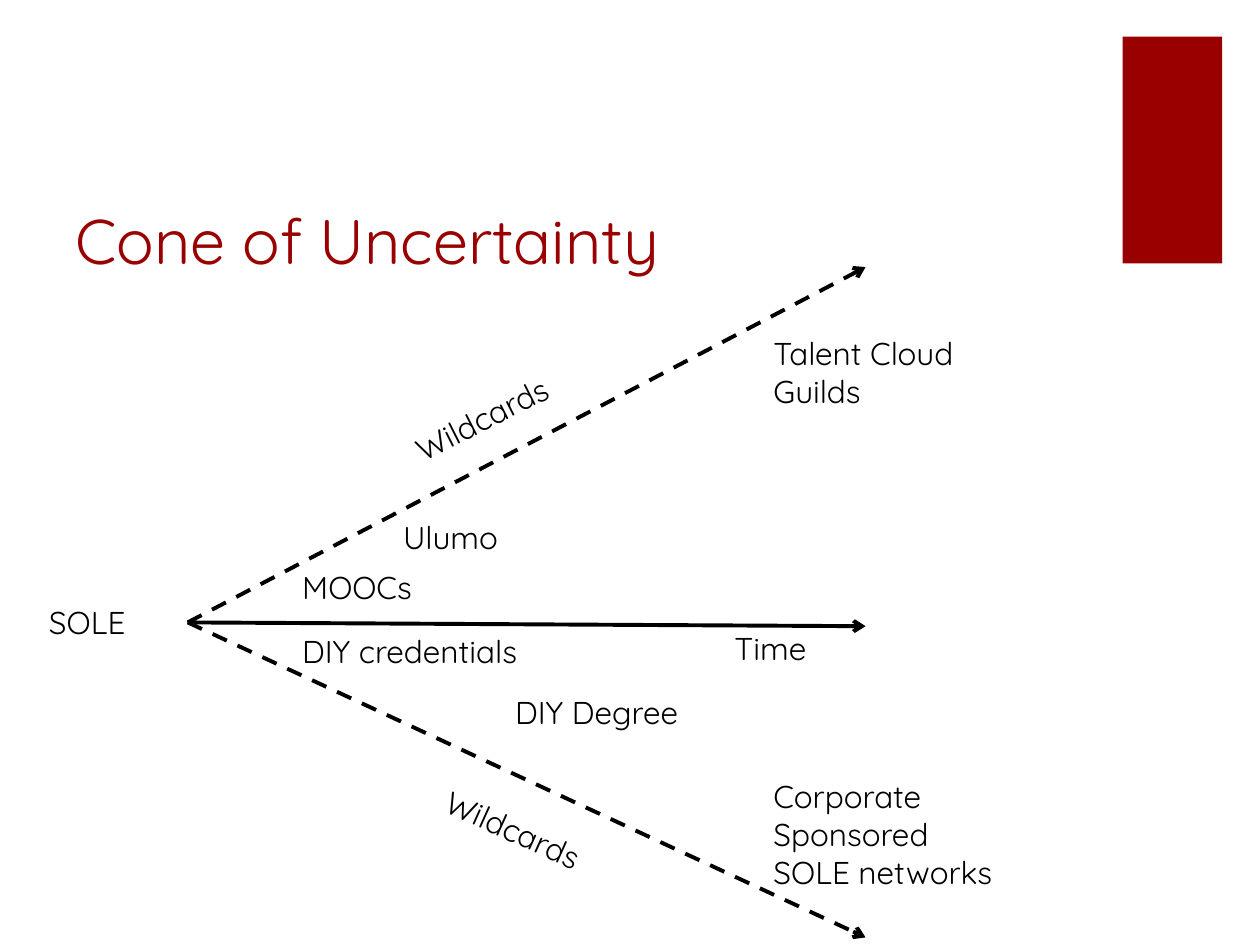
from lxml.etree import SubElement
from pptx import Presentation
from pptx.dml.color import RGBColor
from pptx.enum.dml import MSO_LINE
from pptx.enum.shapes import MSO_CONNECTOR, MSO_SHAPE
from pptx.enum.text import MSO_ANCHOR, MSO_AUTO_SIZE, PP_ALIGN
from pptx.oxml.ns import qn
from pptx.util import Inches, Pt

RED = RGBColor(0x99, 0x00, 0x00)
BLACK = RGBColor(0x00, 0x00, 0x00)

START = (1.49, 4.94)
REACH = 6.87
RAYS = [(4.97, None), (2.12, MSO_LINE.DASH), (7.44, MSO_LINE.DASH)]

# text, left, top, width, height, turn, wrap
LABELS = [
    ("SOLE", 0.29, 4.74, 2.01, 0.4, 0, True),
    ("Time", 5.73, 4.94, 1.13, 0.4, 0, True),
    ("Wildcards", 3.15, 3.1, 1.44, 0.4, 333.2, True),
    ("Wildcards", 3.4, 6.41, 1.47, 0.4, 24.3, True),
    ("MOOCs", 2.3, 4.46, 1.18, 0.4, 0, False),
    ("Talent Cloud Guilds", 6.04, 2.6, 2.01, 0.71, 0, True),
    ("DIY credentials", 2.3, 4.97, 2.02, 0.4, 0, False),
    ("DIY Degree", 3.99, 5.45, 1.59, 0.4, 0, False),
    ("Corporate Sponsored SOLE networks", 6.04, 6.12, 2.01, 1.01, 0, True),
    ("Ulumo", 3.1, 4.06, 1.09, 0.4, 0, False),
]


def apply(item, values):
    for name, value in values.items():
        setattr(item, name, value)


class Board:
    """Holds the text style and the slide being drawn."""

    face = "Quicksand"

    def __init__(self, slide):
        self.slide = slide
        self.shapes = slide.shapes

    def fill_text(self, shape, text, size, color, frame):
        apply(shape.text_frame, frame)
        par = shape.text_frame.paragraphs[0]
        par.alignment = PP_ALIGN.LEFT
        run = par.add_run()
        run.text = text
        apply(run.font, {"name": self.face, "size": Pt(size)})
        run.font.color.rgb = color

    def title(self, text, left, top, width, height):
        shape = self.shapes.title
        apply(shape, {"left": Inches(left), "top": Inches(top),
                      "width": Inches(width), "height": Inches(height)})
        self.fill_text(shape, text, 36, RED, {
            "vertical_anchor": MSO_ANCHOR.BOTTOM, "word_wrap": True,
            "auto_size": MSO_AUTO_SIZE.NONE})

    def block(self, *box):
        shape = self.shapes.add_shape(MSO_SHAPE.RECTANGLE, *map(Inches, box))
        shape.shadow.inherit = False
        shape.fill.solid()
        shape.fill.fore_color.rgb = RED
        shape.line.fill.background()

    def arrow(self, start, end, dash):
        ends = map(Inches, (*start, *end))
        shape = self.shapes.add_connector(MSO_CONNECTOR.STRAIGHT, *ends)
        line = shape.line
        line.color.rgb = BLACK
        apply(line, {"width": Pt(2.25), "dash_style": dash})
        props = shape._element.spPr
        SubElement(props.find(qn("a:ln")), qn("a:tailEnd"), type="arrow")
        SubElement(props, qn("a:effectLst"))

    def label(self, text, left, top, width, height, turn, wrap):
        box = map(Inches, (left, top, width, height))
        shape = self.shapes.add_textbox(*box)
        shape.rotation = turn
        self.fill_text(shape, text, 18, BLACK, {
            "word_wrap": wrap, "auto_size": MSO_AUTO_SIZE.SHAPE_TO_FIT_TEXT})


def main():
    deck = Presentation()
    apply(deck, {"slide_width": Inches(10), "slide_height": Inches(7.5)})
    board = Board(deck.slides.add_slide(deck.slide_layouts[5]))
    board.block(8.91, 0.29, 0.79, 1.8)
    board.title("Cone of Uncertainty", 0.5, 1, 7.12, 1.25)
    for level, dash in RAYS:
        board.arrow(START, (REACH, level), dash)
    for label in LABELS:
        board.label(*label)
    deck.save("out.pptx")


if __name__ == "__main__":
    main()
